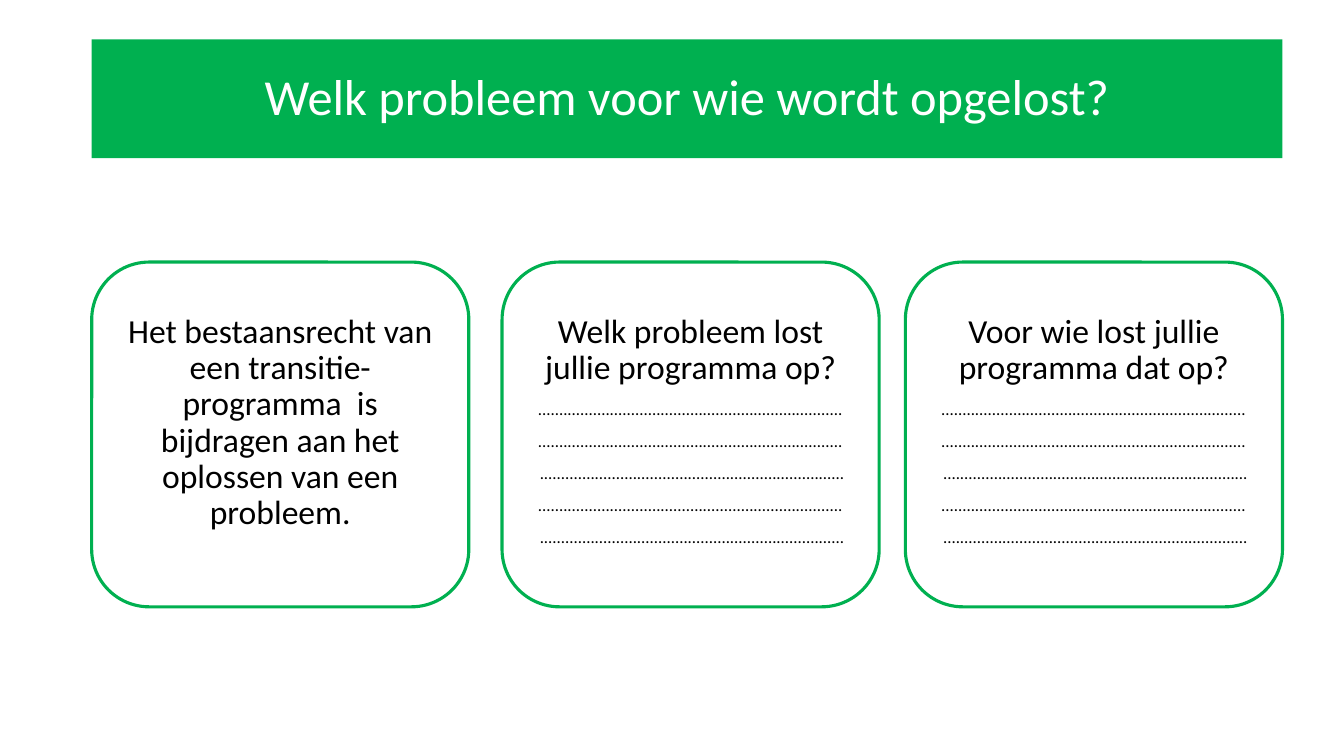
from dataclasses import dataclass

import pptx
import pptx.dml.color
import pptx.enum.shapes
import pptx.enum.text
import pptx.util
from pptx.util import Inches

COLORS = {"green": "00B050", "white": "FFFFFF", "black": "000000"}
FONT = "Calibri"
DOTS = "." * 72
ANSWER_LINES = (DOTS, DOTS, " " + DOTS, DOTS, " " + DOTS)


@dataclass(frozen=True)
class Card:
    left: float
    text: str
    answers: tuple[str, ...] = ()


CARDS = (
    Card(0.91, "Het bestaansrecht van een transitie-programma  is bijdragen aan het oplossen van een probleem."),
    Card(4.98, "Welk probleem lost jullie programma op?", ANSWER_LINES),
    Card(8.98, "Voor wie lost jullie programma dat op?", ANSWER_LINES),
)


def rgb(name: str) -> pptx.dml.color.RGBColor:
    return pptx.dml.color.RGBColor.from_string(COLORS[name])


def write(para, text: str, *, size: float, color: str, before: float = 0) -> None:
    para.alignment = pptx.enum.text.PP_ALIGN.CENTER
    para.line_spacing = 0.9
    para.space_before = pptx.util.Pt(before)
    span = para.add_run()
    span.text = text
    span.font.name = FONT
    span.font.size = pptx.util.Pt(size)
    span.font.color.rgb = rgb(color)


def add_box(page, kind, left: float, top: float, width: float, height: float):
    box = page.shapes.add_shape(kind, Inches(left), Inches(top), Inches(width), Inches(height))
    box.shadow.inherit = False
    box.text_frame.word_wrap = True
    return box


def add_title(page, text: str) -> None:
    box = add_box(page, pptx.enum.shapes.MSO_SHAPE.RECTANGLE, 0.91, 0.39, 11.81, 1.18)
    box.fill.solid()
    box.fill.fore_color.rgb = rgb("green")
    box.line.fill.background()
    box.text_frame.vertical_anchor = pptx.enum.text.MSO_ANCHOR.MIDDLE
    write(box.text_frame.paragraphs[0], text, size=36, color="white")


def add_card(page, card: Card) -> None:
    box = add_box(page, pptx.enum.shapes.MSO_SHAPE.ROUNDED_RECTANGLE, card.left, 2.6, 3.74, 3.42)
    box.fill.background()
    box.line.color.rgb = rgb("green")
    box.line.width = pptx.util.Pt(2.25)
    frame = box.text_frame
    frame.vertical_anchor = pptx.enum.text.MSO_ANCHOR.TOP
    frame.margin_top = Inches(0.35)
    write(frame.paragraphs[0], card.text, size=24, color="black")
    for answer in card.answers:
        write(frame.add_paragraph(), answer, size=12, color="black", before=10)


def main() -> None:
    deck = pptx.Presentation()
    deck.slide_width, deck.slide_height = Inches(13.33), Inches(7.5)
    page = deck.slides.add_slide(deck.slide_layouts[6])

    # Title bar
    add_title(page, "Welk probleem voor wie wordt opgelost?")

    # Question cards
    for card in CARDS:
        add_card(page, card)

    deck.save("out.pptx")


if __name__ == "__main__":
    main()
